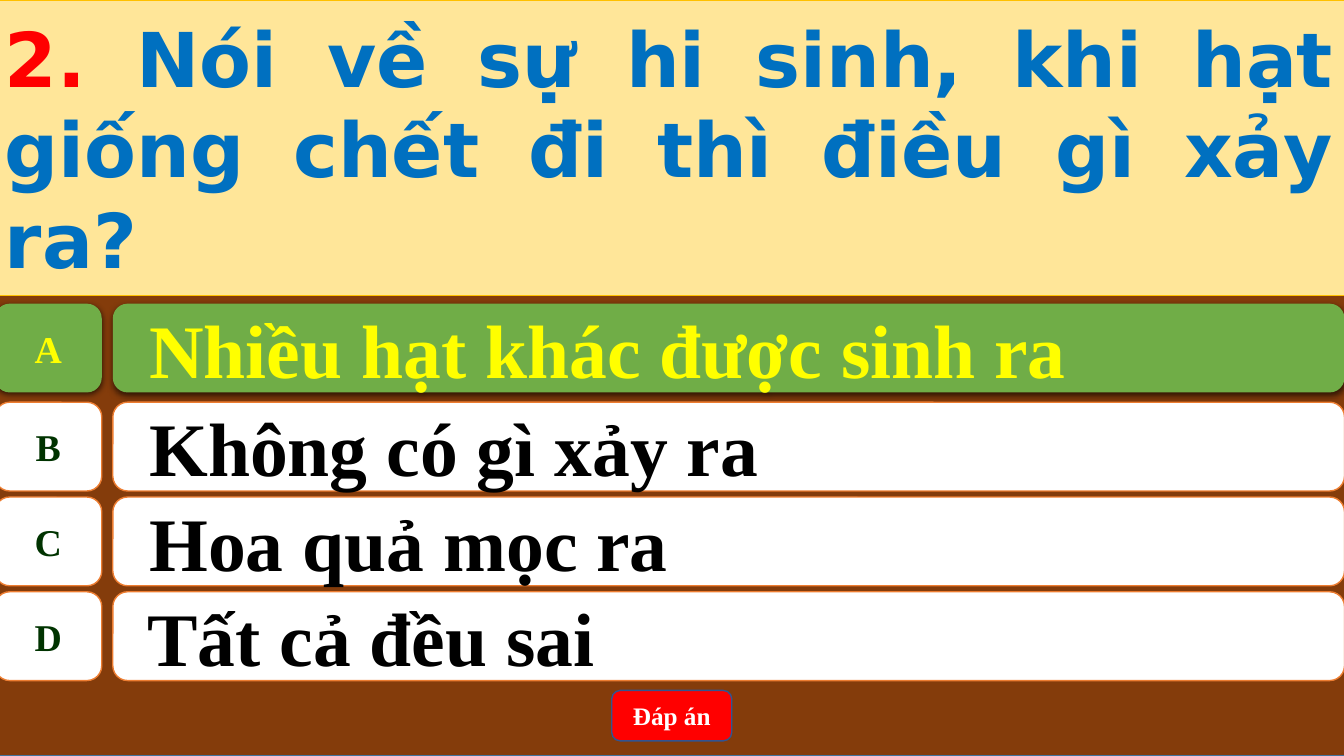
from lxml import etree
from pptx import Presentation
from pptx.dml.color import RGBColor
from pptx.enum.shapes import MSO_SHAPE
from pptx.enum.text import MSO_ANCHOR, PP_ALIGN
from pptx.oxml.ns import qn
from pptx.util import Pt

BROWN = RGBColor(0x84, 0x3C, 0x0B)
STEEL = RGBColor(0x43, 0x73, 0x9E)
CREAM = RGBColor(0xFF, 0xE6, 0x99)
GOLD = RGBColor(0xFF, 0xC0, 0x00)
ORANGE = RGBColor(0xED, 0x7D, 0x31)
GREEN = RGBColor(0x70, 0xAD, 0x47)
DARK_GREEN = RGBColor(0x00, 0x33, 0x00)
BLUE = RGBColor(0x00, 0x70, 0xC0)
NAVY = RGBColor(0x32, 0x54, 0x91)
RED = RGBColor(0xFF, 0x00, 0x00)
YELLOW = RGBColor(0xFF, 0xFF, 0x00)
WHITE = RGBColor(0xFF, 0xFF, 0xFF)
BLACK = RGBColor(0x00, 0x00, 0x00)

SERIF = "Times New Roman"
SANS = "DejaVu Sans"

LEFT, FULL_W = -3.6, 964
ROW_H, ROW_PITCH = 63.4, 67.7
FIRST_ROW_TOP, SECOND_ROW_TOP = 216.9, 287.3
LETTER_W, LETTER_GAP = 76.3, 7.9
ANSWERS = [
    ("A", "Nhiều hạt khác được sinh ra", 23),
    ("B", "Không có gì xảy ra", 23),
    ("C", "Hoa quả mọc ra", 23),
    ("D", "Tất cả đều sai", 21.6),
]
CORRECT = "A"


def add_box(s, kind, x, y, w, h, fill, line=None, line_w=1):
    sp = s.shapes.add_shape(kind, Pt(x), Pt(y), Pt(w), Pt(h))
    sp.shadow.inherit = False
    sp.fill.solid()
    sp.fill.fore_color.rgb = fill
    if line is None:
        sp.line.fill.background()
    else:
        sp.line.color.rgb = line
        sp.line.width = Pt(line_w)
    return sp


def format_run(r, font, size, color):
    r.font.name = font
    r.font.size = Pt(size)
    r.font.bold = True
    r.font.color.rgb = color


def add_label(sp, text, size, color, align=PP_ALIGN.CENTER, wrap=True):
    tf = sp.text_frame
    tf.word_wrap = wrap
    tf.vertical_anchor = MSO_ANCHOR.MIDDLE
    p = tf.paragraphs[0]
    p.text = text
    p.alignment = align
    format_run(p.runs[0], SERIF, size, color)


def add_shadow(sp):
    effects = sp._element.spPr.find(qn("a:effectLst"))
    shadow = etree.SubElement(effects, qn("a:outerShdw"), blurRad=str(Pt(4.5)),
                              dist=str(Pt(1.5)), dir="5400000", rotWithShape="0")
    color = etree.SubElement(shadow, qn("a:srgbClr"), val="000000")
    etree.SubElement(color, qn("a:alpha"), val="63000")


def add_question(s, x, y, w, h):
    sp = add_box(s, MSO_SHAPE.RECTANGLE, x, y, w, h, CREAM, GOLD, 0.5)
    tf = sp.text_frame
    tf.word_wrap = True
    tf.vertical_anchor = MSO_ANCHOR.MIDDLE
    p = tf.paragraphs[0]
    p.alignment = PP_ALIGN.JUSTIFY
    for text, color in [
        ("2. ", RED),
        ("Nói về sự hi sinh, khi hạt giống chết đi thì điều gì xảy ra?", BLUE),
    ]:
        r = p.add_run()
        r.text = text
        format_run(r, SANS, 54, color)


def add_answer(s, x, y, w, h, letter, text, margin):
    """Letter tile and answer bar; the correct answer is highlighted."""
    correct = letter == CORRECT
    fill, line = (GREEN, None) if correct else (WHITE, ORANGE)
    bar_x = x + LETTER_W + LETTER_GAP
    tile = add_box(s, MSO_SHAPE.FLOWCHART_ALTERNATE_PROCESS,
                   x, y, LETTER_W, h, fill, line)
    bar = add_box(s, MSO_SHAPE.ROUNDED_RECTANGLE,
                  bar_x, y, x + w - bar_x, h, fill, line)
    add_label(tile, letter, 27, YELLOW if correct else DARK_GREEN, wrap=False)
    add_label(bar, text, 54, YELLOW if correct else BLACK, PP_ALIGN.LEFT)
    bar.text_frame.margin_left = Pt(margin)
    if correct:
        add_shadow(tile)
        add_shadow(bar)


def add_answer_button(s, x, y, w, h):
    sp = add_box(s, MSO_SHAPE.ROUNDED_RECTANGLE, x, y, w, h, RED, NAVY)
    add_label(sp, "Đáp án", 18, WHITE)


def build_quiz_slide(prs):
    s = prs.slides.add_slide(prs.slide_layouts[6])
    add_box(s, MSO_SHAPE.RECTANGLE, LEFT, 0, FULL_W, 540, BROWN, STEEL)
    add_question(s, LEFT, 0, FULL_W, 211)
    for i, answer in enumerate(ANSWERS):
        y = SECOND_ROW_TOP + (i - 1) * ROW_PITCH if i else FIRST_ROW_TOP
        add_answer(s, LEFT, y, FULL_W, ROW_H, *answer)
    add_answer_button(s, 437, 493.2, 85.7, 36)


def main():
    prs = Presentation()
    prs.slide_width, prs.slide_height = Pt(960), Pt(540)
    build_quiz_slide(prs)
    prs.save("out.pptx")


if __name__ == "__main__":
    main()
